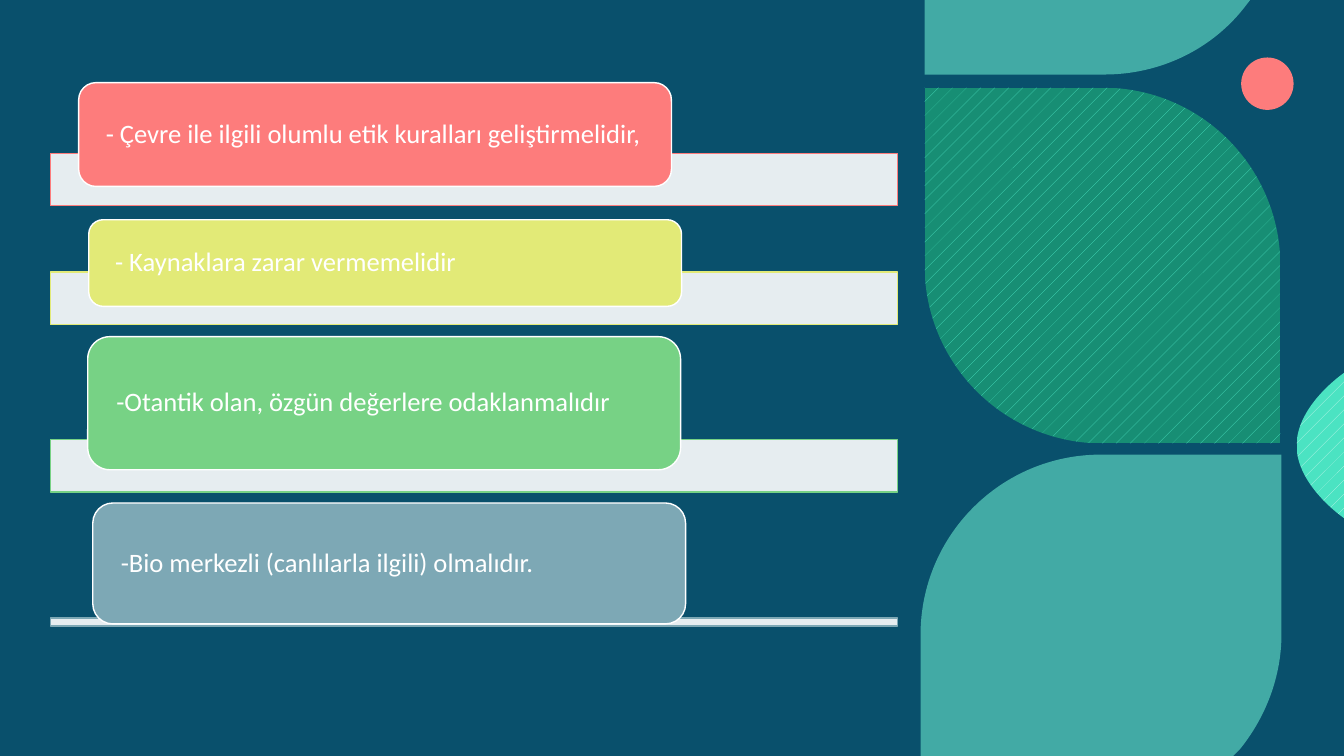
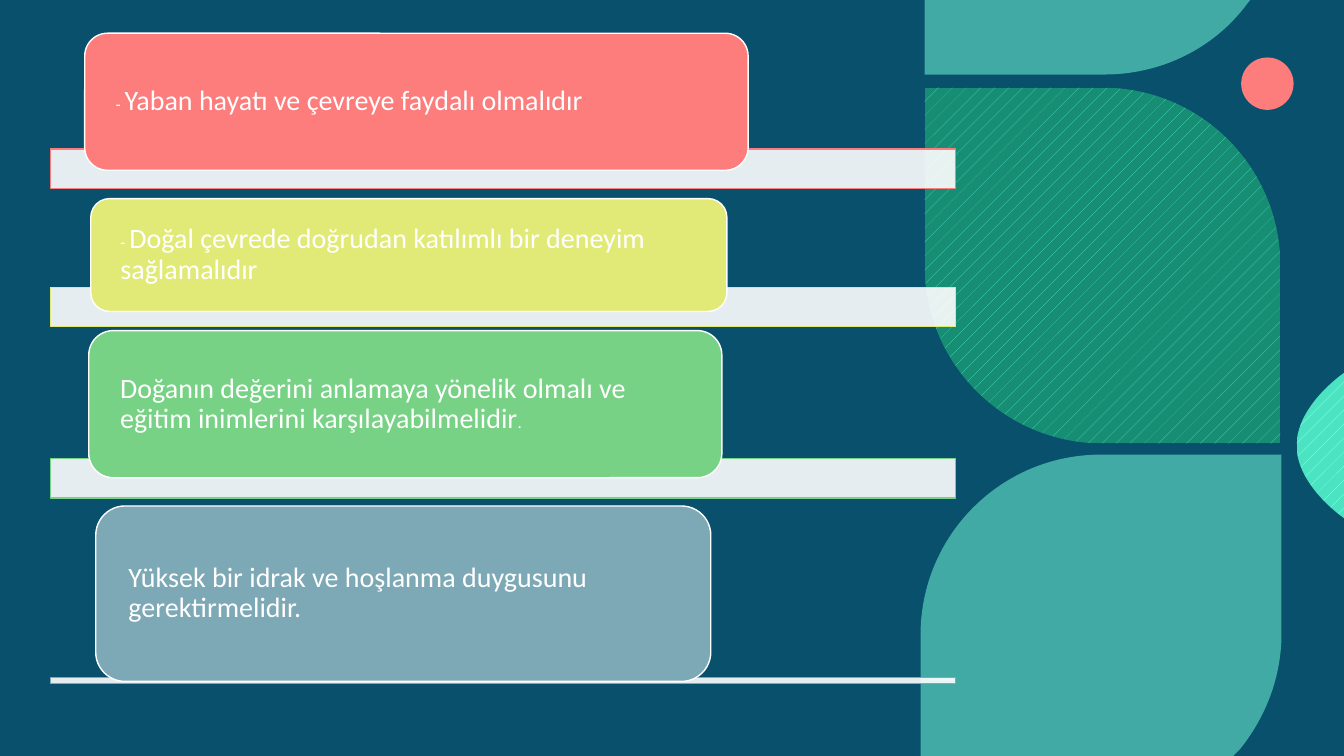
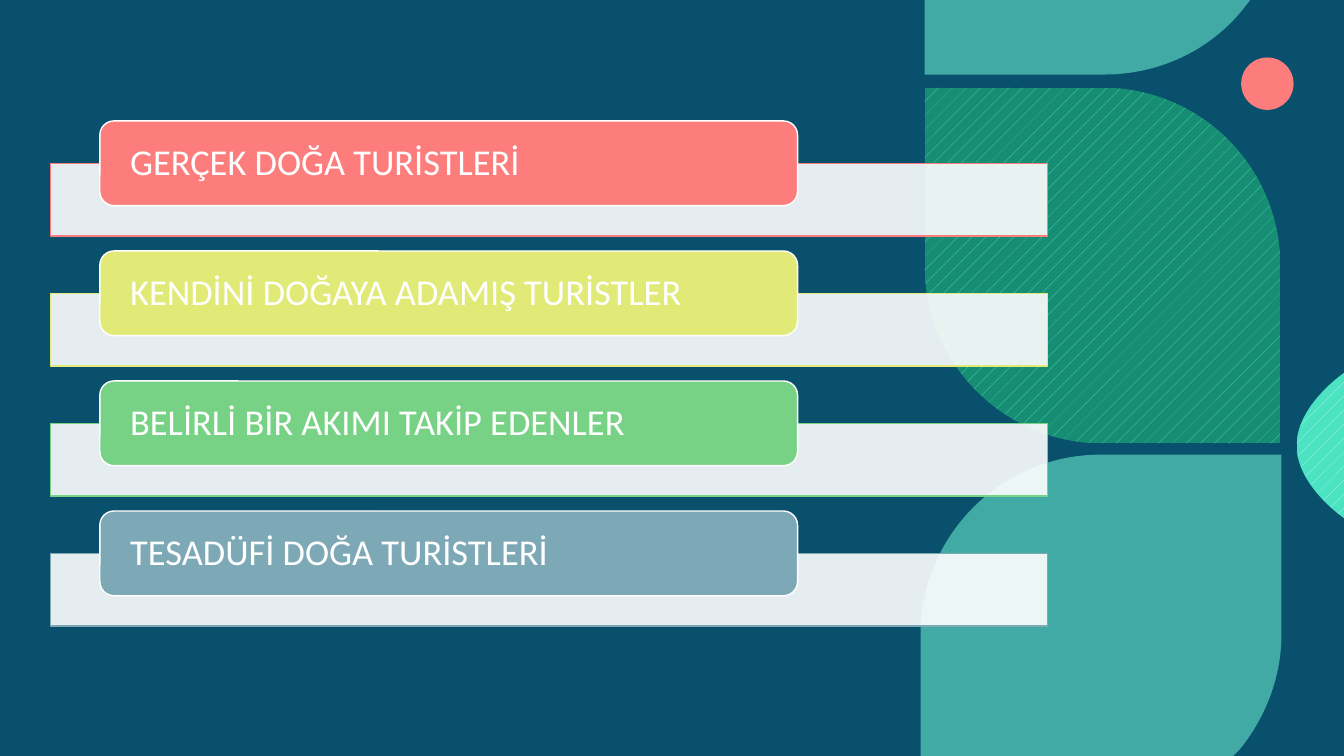
from lxml.etree import SubElement
from pptx import Presentation
from pptx.dml.color import RGBColor
from pptx.enum.dml import MSO_PATTERN
from pptx.enum.shapes import MSO_SHAPE as SHAPE
from pptx.enum.text import MSO_ANCHOR as ANCHOR, PP_ALIGN as ALIGN
from pptx.oxml.ns import qn
from pptx.util import Inches, Pt

WIDTH, HEIGHT = 13.33, 7.5
NAVY, GREEN, DEEP_GREEN = "002060", "18997E", "178E74"
MINT, AQUA, PALE_MINT = "69E7CC", "4BE3C2", "C3F6EB"
CORAL, WHITE = "FD7C7C", "FFFFFF"
ROW_COLOURS = [CORAL, "E2EA77", "77D285", "7DA8B5"]
FONT = "Calibri"


def colour(hex_code):
    return RGBColor.from_string(hex_code)


def paint(shape, fill, opacity=100, line=None):
    shape.shadow.inherit = False
    shape.fill.solid()
    shape.fill.fore_color.rgb = colour(fill)
    if opacity < 100:
        tint = shape.fill._xPr.find(qn("a:solidFill"))[0]
        SubElement(tint, qn("a:alpha")).set("val", str(opacity * 1000))
    if line:
        shape.line.color.rgb = colour(line)
        shape.line.width = Pt(1)
    else:
        shape.line.fill.background()


def hatch(shape, front, back):
    shape.shadow.inherit = False
    shape.line.fill.background()
    shape.fill.patterned()
    shape.fill.pattern = MSO_PATTERN.PERCENT_5
    shape.fill.fore_color.rgb = colour(front)
    shape.fill.back_color.rgb = colour(back)


def add_box(page, kind, left, top, width, height):
    return page.shapes.add_shape(kind, Inches(left), Inches(top), Inches(width), Inches(height))


def add_outline(page, left, top, start, segments):
    points = [start] + [point for segment in segments for point in segment]
    placed = [(Inches(left + x), Inches(top + y)) for x, y in points]
    builder = page.shapes.build_freeform(*placed[0])
    builder.add_line_segments(placed[1:], close=True)
    shape = builder.convert_to_shape()
    outline = next(shape._element.iter(qn("a:path")))
    steps = iter(outline.findall(qn("a:lnTo")))
    for segment in segments:
        lead, *others = [next(steps) for _ in segment]
        if others:
            curve = SubElement(outline, qn("a:cubicBezTo"))
            lead.addprevious(curve)
            for step in (lead, *others):
                curve.append(step[0])
                outline.remove(step)
    return shape


def add_leaves(page, left, top):
    dot = add_box(page, SHAPE.OVAL, left + 3.18, top + 0.57, 0.52, 0.52)
    paint(dot, CORAL)

    upper = add_outline(page, left, top, (0.04, 0), [
        [(3.27, 0)], [(3.2, 0.09)],
        [(2.88, 0.49), (2.38, 0.74), (1.82, 0.74)],
        [(0.04, 0.74)],
    ])
    lower = add_outline(page, left, top, (1.79, 4.51), [
        [(3.58, 4.51)], [(3.58, 6.29)],
        [(3.58, 6.72), (3.42, 7.12), (3.17, 7.43)],
        [(3.1, 7.5)], [(0, 7.5)], [(0, 6.3)],
        [(0, 5.31), (0.8, 4.51), (1.79, 4.51)],
    ])
    for leaf in (upper, lower):
        paint(leaf, MINT, opacity=60)

    bud = add_outline(page, left, top, (4.2, 3.7), [
        [(4.2, 5.14)],
        [(4.2, 5.14), (3.73, 4.82), (3.73, 4.42)],
        [(3.73, 4.02), (4.2, 3.7), (4.2, 3.7)],
    ])
    hatch(bud, PALE_MINT, AQUA)

    middle = add_outline(page, left, top, (3.57, 4.4), [
        [(1.81, 4.4)],
        [(0.83, 4.4), (0.04, 3.61), (0.04, 2.63)],
        [(0.04, 0.87)], [(1.81, 0.87)],
        [(2.78, 0.87), (3.57, 1.66), (3.57, 2.64)],
    ])
    hatch(middle, AQUA, DEEP_GREEN)


def add_page(deck):
    page = deck.slides.add_slide(deck.slide_layouts[6])
    page.background.fill.solid()
    page.background.fill.fore_color.rgb = colour(NAVY)
    paint(add_box(page, SHAPE.RECTANGLE, 0, 0, WIDTH, HEIGHT), GREEN, opacity=40)
    add_leaves(page, 9.13, 0)
    return page


def write_label(card, pieces, inset):
    frame = card.text_frame
    frame.word_wrap = True
    frame.vertical_anchor = ANCHOR.MIDDLE
    frame.margin_left = frame.margin_right = Inches(inset)
    frame.margin_top = frame.margin_bottom = 0
    para = frame.paragraphs[0]
    para.alignment = ALIGN.LEFT
    para.line_spacing = 0.9
    for text, size in pieces:
        span = para.add_run()
        span.text = text
        span.font.name = FONT
        span.font.size = Pt(size)
        span.font.color.rgb = colour(WHITE)


def add_list(page, left, width, inset, rows):
    for accent, (band, card_box, pieces) in zip(ROW_COLOURS, rows):
        band_top, band_height = band
        strip = add_box(page, SHAPE.RECTANGLE, left, band_top, width, band_height)
        paint(strip, WHITE, opacity=90, line=accent)
        indent, *rest = card_box
        card = add_box(page, SHAPE.ROUNDED_RECTANGLE, left + indent, *rest)
        paint(card, accent, line=WHITE)
        write_label(card, pieces, inset)


def ethics_rows():
    return [
        ((1.52, 0.52), (0.28, 0.82, 5.88, 1.03),
         [("- Çevre ile ilgili olumlu etik kuralları geliştirmelidir,", 19)]),
        ((2.7, 0.52), (0.38, 2.18, 5.88, 0.86),
         [("- Kaynaklara zarar vermemelidir", 19)]),
        ((4.36, 0.52), (0.37, 3.34, 5.88, 1.32),
         [("-Otantik olan, özgün değerlere odaklanmalıdır", 19)]),
        ((6.13, 0.08), (0.42, 4.99, 5.88, 1.2),
         [("-Bio merkezli (canlılarla ilgili) olmalıdır.", 19)]),
    ]


def benefit_rows():
    return [
        ((1.48, 0.39), (0.34, 0.33, 6.58, 1.36),
         [("- ", 12), ("Yaban hayatı ve çevreye faydalı olmalıdır", 20)]),
        ((2.85, 0.39), (0.4, 1.97, 6.31, 1.12),
         [("- ", 12), ("Doğal çevrede doğrudan katılımlı bir deneyim sağlamalıdır", 20)]),
        ((4.55, 0.39), (0.38, 3.28, 6.28, 1.46),
         [("Doğanın değerini anlamaya yönelik olmalı ve eğitim inimlerini karşılayabilmelidir", 20),
          (".", 12)]),
        ((6.72, 0.06), (0.45, 5.02, 6.1, 1.74),
         [("Yüksek bir idrak ve hoşlanma duygusunu gerektirmelidir.", 20)]),
    ]


def tourist_rows(top=1.2, pitch=1.29):
    names = [
        "GERÇEK DOĞA TURİSTLERİ",
        "KENDİNİ DOĞAYA ADAMIŞ TURİSTLER",
        "BELİRLİ BİR AKIMI TAKİP EDENLER",
        "TESADÜFİ DOĞA TURİSTLERİ",
    ]
    rows = []
    for index, name in enumerate(names):
        card_top = top + index * pitch
        rows.append(((card_top + 0.42, 0.72), (0.49, card_top, 6.92, 0.84), [(name, 26)]))
    return rows


def main():
    deck = Presentation()
    deck.slide_width, deck.slide_height = Inches(WIDTH), Inches(HEIGHT)
    add_list(add_page(deck), 0.5, 8.4, 0.22, ethics_rows())
    add_list(add_page(deck), 0.5, 8.98, 0.24, benefit_rows())
    add_list(add_page(deck), 0.5, 9.89, 0.26, tourist_rows())
    deck.save("out.pptx")


if __name__ == "__main__":
    main()
